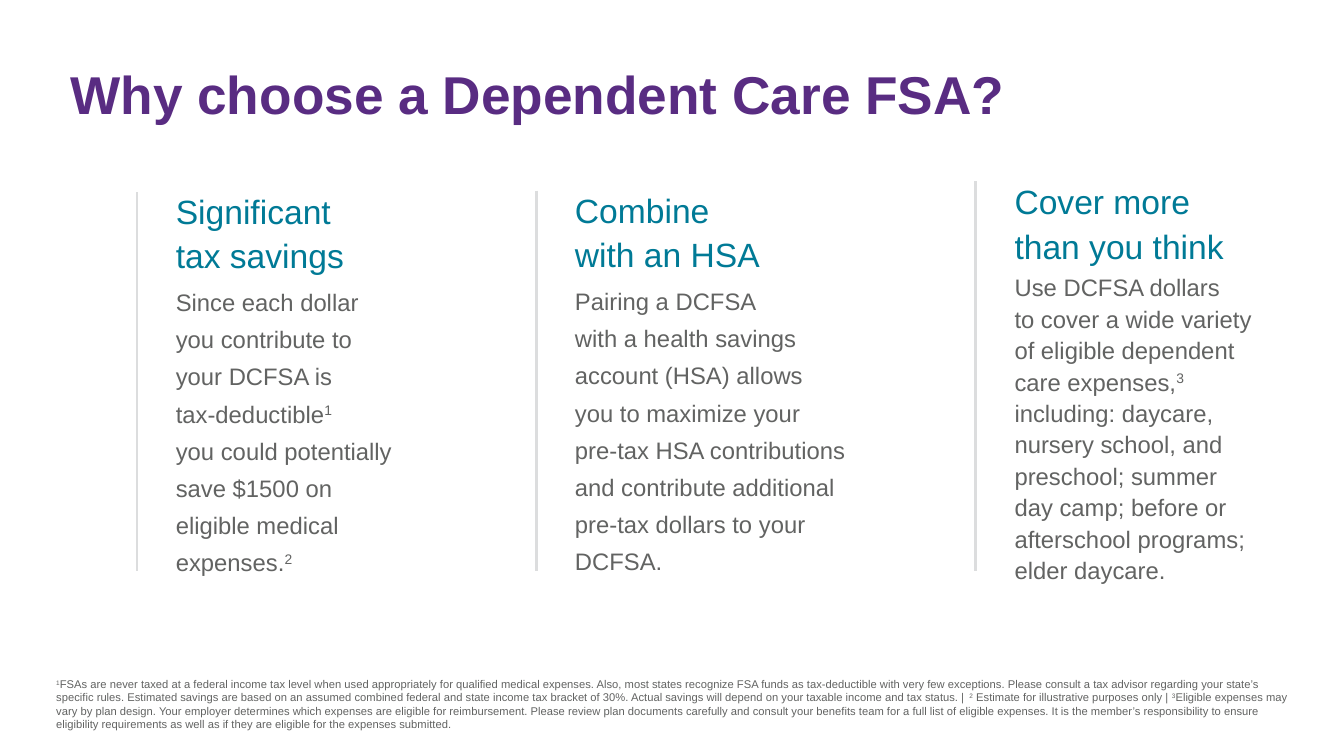
from pptx import Presentation
from pptx.dml.color import RGBColor
from pptx.enum.shapes import MSO_CONNECTOR
from pptx.enum.text import MSO_ANCHOR
from pptx.oxml.ns import qn
from pptx.util import Pt
from lxml.etree import SubElement

PURPLE, TEAL, GREY, RULE = "592C82", "007A96", "626362", "DCDDDE"
HEAD = {"size": Pt(24), "name": "Arial"}
BODY = {"size": Pt(17), "name": "Arial"}
NOTE = {"size": Pt(8), "name": "Arial"}
TITLE = {"size": Pt(38), "name": "Arial", "bold": True}

# Rule x, rule top, text top, text width, text height, body line spacing, head, body
COLUMNS = [
    (97.9, 137.5, 129.6, 169.2, 293.8, 1.3, "Significant \vtax savings",
     ["Since each dollar \vyou contribute to \vyour DCFSA is \vtax-deductible", "^1 \v",
      "you could potentially save $1500 on eligible medical expenses.", "^2"]),
    (383, 136.1, 128.9, 208.8, 320.4, 1.3, "Combine \vwith an HSA",
     ["Pairing a DCFSA \vwith a health savings account (HSA) allows you to maximize "
      "your pre-tax HSA contributions and contribute additional pre-tax dollars to your DCFSA."]),
    (697, 129.6, 123.1, 190.8, 289.4, 1.1, "Cover more than you think",
     ["Use DCFSA dollars \vto cover a wide variety of eligible dependent care expenses,", "^3",
      " including: daycare, nursery school, and preschool; summer day camp; before or "
      "afterschool programs; elder daycare."]),
]
RULE_END = 408.2
TEXT_GAP = 20.6

FOOTNOTE = [
    "^1",
    "FSAs are never taxed at a federal income tax level when used appropriately for qualified "
    "medical expenses. Also, most states recognize FSA funds as tax-deductible with very few "
    "exceptions. Please consult a tax advisor regarding your state’s specific rules. Estimated "
    "savings are based on an assumed combined federal and state income tax bracket of 30%. "
    "Actual savings will depend on your taxable income and tax status. | ",
    "^2", " Estimate for illustrative purposes only | ", "^3",
    "Eligible expenses may vary by plan design. Your employer determines which expenses are "
    "eligible for reimbursement. Please review plan documents carefully and consult your "
    "benefits team for a full list of eligible expenses. It is the member’s responsibility to "
    "ensure eligibility requirements as well as if they are eligible for the expenses submitted.",
]


def color(code):
    return RGBColor.from_string(code)


def add_box(slide, left, top, width, height, inset=3.6):
    box = slide.shapes.add_textbox(Pt(left), Pt(top), Pt(width), Pt(height))
    frame = box.text_frame
    frame.word_wrap = True
    frame.vertical_anchor = MSO_ANCHOR.TOP
    frame.margin_top = frame.margin_bottom = Pt(inset)
    return frame


def add_text(para, parts, font, shade, **layout):
    """Fill a paragraph; a part that starts with ^ is raised."""
    for key, value in layout.items():
        setattr(para, key, value)
    for part in parts:
        raised = part.startswith("^")
        for count, line in enumerate(part.lstrip("^").split("\v")):
            if count:
                para.add_line_break()
                mark = para._p.findall(qn("a:br"))[-1]
                SubElement(mark, qn("a:rPr"), sz=str(int(font["size"].pt * 100)))
            if not line:
                continue
            run = para.add_run()
            run.text = line
            for key, value in font.items():
                setattr(run.font, key, value)
            run.font.color.rgb = color(shade)
            if raised:
                run.font._element.set("baseline", "30000")


def add_rule(slide, left, top, end):
    rule = slide.shapes.add_connector(
        MSO_CONNECTOR.STRAIGHT, Pt(left), Pt(top), Pt(left), Pt(end))
    rule.line.color.rgb = color(RULE)
    rule.line.width = Pt(2)
    SubElement(rule._element.spPr, qn("a:effectLst"))


def add_column(slide, left, start, top, width, height, pitch, head, body):
    add_rule(slide, left, start, RULE_END)
    frame = add_box(slide, left + TEXT_GAP, top, width, height)
    add_text(frame.paragraphs[0], [head], HEAD, TEAL, line_spacing=1.1, space_after=Pt(3))
    add_text(frame.add_paragraph(), body, BODY, GREY, line_spacing=pitch, space_after=Pt(3))


def main():
    deck = Presentation()
    deck.slide_width, deck.slide_height = Pt(960), Pt(540)
    slide = deck.slides.add_slide(deck.slide_layouts[6])

    # Title
    frame = add_box(slide, 43.2, 21.6, 864, 59.8, inset=7.2)
    add_text(frame.paragraphs[0], ["Why choose a Dependent Care FSA?"], TITLE, PURPLE,
             line_spacing=Pt(60.8))

    # Three reasons
    for column in COLUMNS:
        add_column(slide, *column)

    # Footnote
    frame = add_box(slide, 33.1, 480.2, 895, 51.1)
    add_text(frame.paragraphs[0], FOOTNOTE, NOTE, GREY, space_after=Pt(1.3))

    deck.save("out.pptx")


if __name__ == "__main__":
    main()
